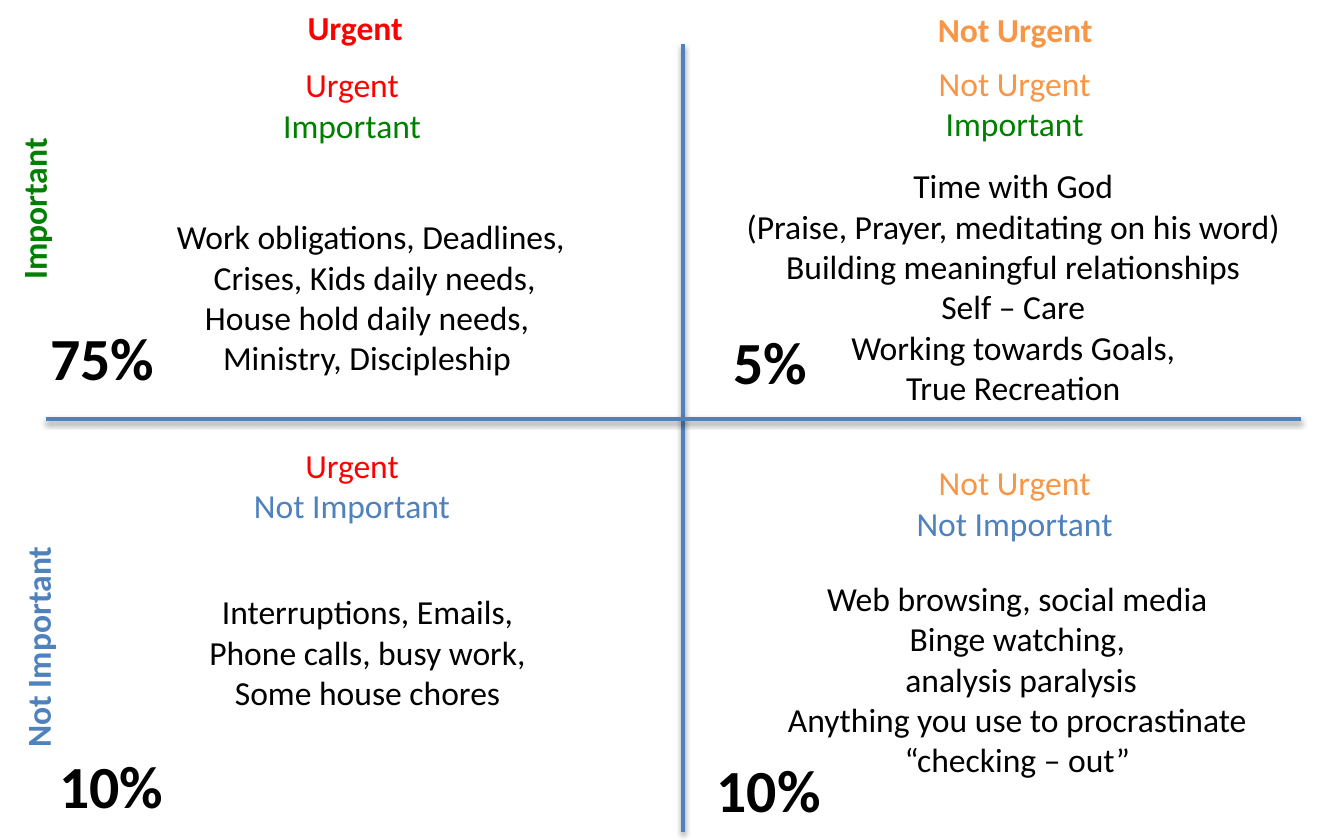
from dataclasses import dataclass, field

from lxml.etree import SubElement
from pptx import Presentation
from pptx.dml.color import RGBColor as Rgb
from pptx.enum.shapes import MSO_CONNECTOR as Link
from pptx.enum.text import MSO_ANCHOR as Anchor, MSO_AUTO_SIZE as Fit, PP_ALIGN as Align
from pptx.oxml.ns import qn
from pptx.util import Inches, Pt

WIDE, HIGH = Inches(10), Inches(6.25)


@dataclass(frozen=True)
class Theme:
    font: str = "Calibri"
    body: int = 18
    big: int = 32
    rule: int = 2
    ink: str = "000000"
    axis: str = "4F81BD"
    shade: str = "000000"
    tags: dict = field(default_factory=lambda: {
        "Urgent": "FF0000",
        "Not Urgent": "F79646",
        "Important": "008000",
        "Not Important": "4F81BD",
    })


THEME = Theme()

# Places are percent of the slide: left, top, width, height.
HEADS = [
    ("Urgent", (21.9, 0, 9.3, 6.4), 0),
    ("Not Urgent", (68.8, 0.32, 13.7, 11.36), 0),
    ("Important", (-2.3, 19.04, 12.7, 11.36), 270),
    ("Not Important", (-4.2, 71.2, 17.1, 11.36), 270),
]

# Each quadrant: its two tags and their place, notes and place, share and place.
QUADS = [
    (["Urgent", "Important"], (14.4, 6.88, 23.6, 11.36),
     ["Work obligations, Deadlines,", " Crises, Kids daily needs,",
      "House hold daily needs, ", "Ministry, Discipleship "],
     (11.9, 24.96, 31.4, 25.92),
     "75%", (2.7, 37.44, 9.8, 10.24)),
    (["Not Urgent", "Important"], (63.7, 6.72, 23.6, 11.36),
     ["Time with God", "(Praise, Prayer, meditating on his word)",
      "Building meaningful relationships", "Self – Care",
      "Working towards Goals,", "True Recreation"],
     (54.1, 18.88, 42.6, 30.72),
     "5%", (53.5, 37.92, 7.6, 10.24)),
    (["Urgent", "Not Important"], (14.4, 52.16, 23.6, 11.36),
     ["Interruptions, Emails,", "Phone calls, busy work,", "Some house chores"],
     (14.4, 69.6, 25.9, 20.96),
     "10%", (3.4, 88.32, 9.8, 10.24)),
    (["Not Urgent", "Not Important"], (63.7, 54.24, 23.6, 11.36),
     ["Web browsing, social media", "Binge watching,", " analysis paralysis",
      "Anything you use to procrastinate", "“checking – out”"],
     (57.3, 68, 36.8, 25.92),
     "10%", (52.3, 88.8, 9.8, 10.24)),
]


def scale(place):
    """Turn percent pairs (across, down) into slide lengths."""
    return [round(part * (HIGH if i % 2 else WIDE) / 100)
            for i, part in enumerate(place)]


def add_text(slide, lines, place, size=THEME.body, bold=False,
             align=Align.CENTER, wrap=False):
    box = slide.shapes.add_textbox(*scale(place))
    frame = box.text_frame
    frame.text = "\n".join(lines)
    frame.word_wrap = wrap
    frame.auto_size = Fit.NONE
    frame.vertical_anchor = Anchor.TOP
    for para in frame.paragraphs:
        para.alignment = align
        for run in para.runs:
            font = run.font
            font.name, font.size, font.bold = THEME.font, Pt(size), bold
            tint = THEME.tags.get(run.text, THEME.ink)
            font.color.rgb = Rgb.from_string(tint)
    return box


def add_head(slide, text, place, turn):
    box = add_text(slide, [text], place, bold=True, align=Align.LEFT)
    box.rotation = turn


def add_quad(slide, tags, top, notes, mid, share, low):
    add_text(slide, tags, top, wrap=True)
    add_text(slide, notes, mid)
    add_text(slide, [share], low, size=THEME.big, bold=True)


def add_axis(slide, ends):
    """Draw one line of the cross, with a soft shadow below it."""
    axis = slide.shapes.add_connector(Link.STRAIGHT, *scale(ends))
    axis.line.color.rgb = Rgb.from_string(THEME.axis)
    axis.line.width = Pt(THEME.rule)
    glow = SubElement(axis._element.spPr, qn("a:effectLst"))
    cast = SubElement(glow, qn("a:outerShdw"), blurRad="40000", dist="20000",
                      dir="5400000", rotWithShape="0")
    tint = SubElement(cast, qn("a:srgbClr"), val=THEME.shade)
    SubElement(tint, qn("a:alpha"), val="38000")


def main():
    deck = Presentation()
    deck.slide_width, deck.slide_height = WIDE, HIGH
    slide = deck.slides.add_slide(deck.slide_layouts[6])
    for ends in [(50.8, 5.28, 50.8, 99.04), (3.4, 49.92, 96.8, 49.92)]:
        add_axis(slide, ends)
    for head in HEADS:
        add_head(slide, *head)
    for quad in QUADS:
        add_quad(slide, *quad)
    deck.save("out.pptx")


if __name__ == "__main__":
    main()
